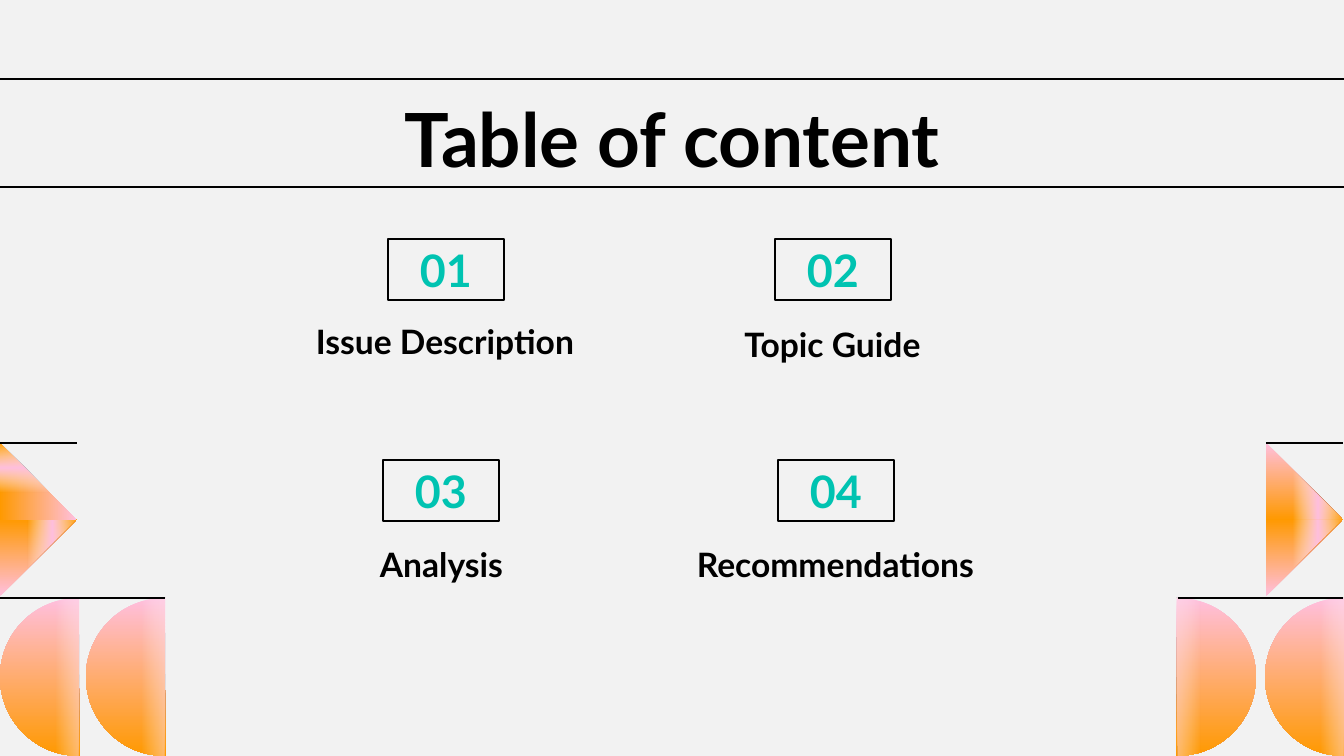
"""Build a table of contents slide with four numbered topics and geometric corner ornaments."""
import dataclasses
import typing

import pptx
import pptx.dml.color
import pptx.enum.shapes
import pptx.enum.text
import pptx.oxml
import pptx.oxml.ns
import pptx.util

SLIDE_WIDTH, SLIDE_HEIGHT = 1344, 756
EMU_PER_PX = 9144000 / SLIDE_WIDTH
FONT = "Lato"

BACKGROUND = pptx.dml.color.RGBColor(0xF2, 0xF2, 0xF2)
BLACK = pptx.dml.color.RGBColor(0x00, 0x00, 0x00)
TEAL = pptx.dml.color.RGBColor(0x00, 0xC3, 0xB1)
PINK = pptx.dml.color.RGBColor(0xFF, 0xBF, 0xDE)
ORANGE = pptx.dml.color.RGBColor(0xFF, 0x99, 0x00)
WHITE = pptx.dml.color.RGBColor(0xFF, 0xFF, 0xFF)

TRIANGLE = pptx.enum.shapes.MSO_SHAPE.RIGHT_TRIANGLE
PIE = pptx.enum.shapes.MSO_SHAPE.PIE
TOP = pptx.enum.text.MSO_ANCHOR.TOP
MIDDLE = pptx.enum.text.MSO_ANCHOR.MIDDLE
BOTTOM = pptx.enum.text.MSO_ANCHOR.BOTTOM


class Stop(typing.NamedTuple):
    """One gradient stop, with position and opacity in percent."""
    position: int
    color: pptx.dml.color.RGBColor
    opacity: int = 100


class Layer(typing.NamedTuple):
    """The turn, mirroring and adjustments of one ornament layer."""
    rotation: int
    mirrored: bool
    adjustments: tuple[float, ...] = ()


@dataclasses.dataclass(frozen=True)
class Ornament:
    """A shape drawn twice: a warm base and a pink glow over it."""
    kind: pptx.enum.shapes.MSO_SHAPE
    left: int
    top: int
    size: int
    base: Layer
    glow: Layer


@dataclasses.dataclass(frozen=True)
class Topic:
    """A numbered box and the caption below it."""
    number: str
    caption: str
    box_left: int
    box_top: int
    caption_left: int
    caption_top: int
    caption_width: int


class Rule(typing.NamedTuple):
    """A horizontal rule."""
    start: int
    end: int
    height: int


WARM = (Stop(0, PINK), Stop(100, ORANGE))
GLOW = (Stop(0, WHITE, 0), Stop(33, PINK), Stop(65, WHITE, 0), Stop(100, WHITE, 0))

BASE_ARC, GLOW_ARC = (161.96, 54.3), (215.86, 107.6)
LEFT_HALF = (Layer(0, True, BASE_ARC), Layer(90, True, GLOW_ARC))
RIGHT_HALF = (Layer(0, False, BASE_ARC), Layer(270, False, GLOW_ARC))
UPPER_LEFT = (Layer(90, True), Layer(0, False))
UPPER_RIGHT = (Layer(0, False), Layer(90, True))
LOWER = (Layer(180, True), Layer(90, False))

TRIANGLE_TOP, TRIANGLE_SIZE, TRIANGLE_RIGHT = 443, 77, 1266
PIE_TOP, PIE_SIZE = 598, 158
ORNAMENTS = (
    Ornament(TRIANGLE, 0, TRIANGLE_TOP + 76, TRIANGLE_SIZE, *LOWER),
    Ornament(TRIANGLE, 0, TRIANGLE_TOP, TRIANGLE_SIZE, *UPPER_LEFT),
    Ornament(TRIANGLE, TRIANGLE_RIGHT, TRIANGLE_TOP + 76, TRIANGLE_SIZE, *LOWER),
    Ornament(TRIANGLE, TRIANGLE_RIGHT, TRIANGLE_TOP, TRIANGLE_SIZE, *UPPER_RIGHT),
    Ornament(PIE, 1265, PIE_TOP, PIE_SIZE, *LEFT_HALF),
    Ornament(PIE, 1098, PIE_TOP, PIE_SIZE, *RIGHT_HALF),
    Ornament(PIE, 0, PIE_TOP, PIE_SIZE, *LEFT_HALF),
    Ornament(PIE, 86, PIE_TOP, PIE_SIZE, *LEFT_HALF),
)
RULES = (
    Rule(0, SLIDE_WIDTH, 79),
    Rule(0, SLIDE_WIDTH, 187),
    Rule(0, TRIANGLE_SIZE, TRIANGLE_TOP),
    Rule(TRIANGLE_RIGHT, 1343, TRIANGLE_TOP),
    Rule(0, 165, PIE_TOP),
    Rule(1178, 1343, PIE_TOP),
)
TOPICS = (
    Topic("01", "Issue Description", 388, 239, 259, 320, 372),
    Topic("02", "Topic Guide", 775, 239, 672, 323, 321),
    Topic("03", "Analysis", 383, 460, 266, 543, 351),
    Topic("04", "Recommendations", 778, 460, 642, 543, 387),
)
BOX_WIDTH, BOX_HEIGHT, CAPTION_HEIGHT = 116, 61, 55


def px(length: int) -> int:
    """Turn pixels into EMU."""
    return round(length * EMU_PER_PX)


def fill_gradient(shape, stops: tuple[Stop, ...]) -> None:
    """Fill a shape with a downward gradient that may be partly transparent."""
    marks = "".join(
        f'<a:gs pos="{stop.position * 1000}"><a:srgbClr val="{stop.color}">'
        f'<a:alpha val="{stop.opacity * 1000}"/></a:srgbClr></a:gs>'
        for stop in stops
    )
    gradient = pptx.oxml.parse_xml(
        f'<a:gradFill {pptx.oxml.ns.nsdecls("a")} rotWithShape="1">'
        f'<a:gsLst>{marks}</a:gsLst><a:lin ang="5400000" scaled="0"/></a:gradFill>'
    )
    shape.fill.background()
    properties = shape.element.spPr
    properties.replace(properties.find(pptx.oxml.ns.qn("a:noFill")), gradient)


def draw_ornament(slide, ornament: Ornament) -> None:
    """Draw the base and the glow of one ornament."""
    for layer, stops in ((ornament.base, WARM), (ornament.glow, GLOW)):
        shape = slide.shapes.add_shape(
            ornament.kind, px(ornament.left), px(ornament.top), px(ornament.size), px(ornament.size)
        )
        shape.shadow.inherit = False
        shape.rotation = layer.rotation
        if layer.mirrored:
            shape.element.spPr.xfrm.set("flipH", "1")
        for index, value in enumerate(layer.adjustments):
            shape.adjustments[index] = value
        fill_gradient(shape, stops)
        shape.line.fill.background()


def draw_rule(slide, rule: Rule) -> None:
    """Draw a thin black horizontal rule."""
    connector = slide.shapes.add_connector(
        pptx.enum.shapes.MSO_CONNECTOR.STRAIGHT,
        px(rule.start), px(rule.height), px(rule.end), px(rule.height),
    )
    connector.line.color.rgb = BLACK
    connector.line.width = pptx.util.Pt(0.75)
    connector.element.spPr.append(
        pptx.oxml.parse_xml(f'<a:effectLst {pptx.oxml.ns.nsdecls("a")}/>')
    )


def write(shape, text: str, size: int, color: pptx.dml.color.RGBColor, anchor) -> None:
    """Write one bold centred line without a bullet."""
    frame = shape.text_frame
    frame.text = text
    frame.word_wrap = True
    frame.auto_size = pptx.enum.text.MSO_AUTO_SIZE.NONE
    frame.vertical_anchor = anchor
    frame.margin_left = frame.margin_right = pptx.util.Inches(0.1)
    frame.margin_top = frame.margin_bottom = pptx.util.Inches(0.1)
    paragraph = frame.paragraphs[0]
    paragraph.alignment = pptx.enum.text.PP_ALIGN.CENTER
    paragraph.space_before = pptx.util.Pt(0)
    properties = paragraph._p.get_or_add_pPr()
    properties.set("marL", "0")
    properties.set("indent", "0")
    properties.append(pptx.oxml.parse_xml(f'<a:buNone {pptx.oxml.ns.nsdecls("a")}/>'))
    font = paragraph.runs[0].font
    font.name, font.size, font.bold = FONT, pptx.util.Pt(size), True
    font.color.rgb = color


def place(shape, left: int, top: int, width: int, height: int) -> None:
    """Move and resize a placeholder."""
    shape.left, shape.top, shape.width, shape.height = map(px, (left, top, width, height))


def draw_topic(slide, topic: Topic, caption) -> None:
    """Draw the number box and fill the caption placeholder."""
    box = slide.shapes.add_shape(
        pptx.enum.shapes.MSO_SHAPE.RECTANGLE,
        px(topic.box_left), px(topic.box_top), px(BOX_WIDTH), px(BOX_HEIGHT),
    )
    box.shadow.inherit = False
    box.fill.background()
    box.line.color.rgb = BLACK
    box.line.width = pptx.util.Pt(0.75)
    write(box, topic.number, 24, TEAL, MIDDLE)
    place(caption, topic.caption_left, topic.caption_top, topic.caption_width, CAPTION_HEIGHT)
    write(caption, topic.caption, 18, BLACK, BOTTOM)


def main() -> None:
    """Build and save the slide."""
    deck = pptx.Presentation()
    deck.slide_width, deck.slide_height = px(SLIDE_WIDTH), px(SLIDE_HEIGHT)
    slide = deck.slides.add_slide(deck.slide_layouts.get_by_name("Comparison"))
    slide.background.fill.solid()
    slide.background.fill.fore_color.rgb = BACKGROUND
    title, *captions = slide.placeholders
    for ornament in ORNAMENTS:
        draw_ornament(slide, ornament)
    for rule in RULES:
        draw_rule(slide, rule)
    place(title, 105, 79, 1134, 90)
    write(title, "Table of content", 40, BLACK, TOP)
    for topic, caption in zip(TOPICS, captions):
        draw_topic(slide, topic, caption)
    deck.save("out.pptx")


if __name__ == "__main__":
    main()
